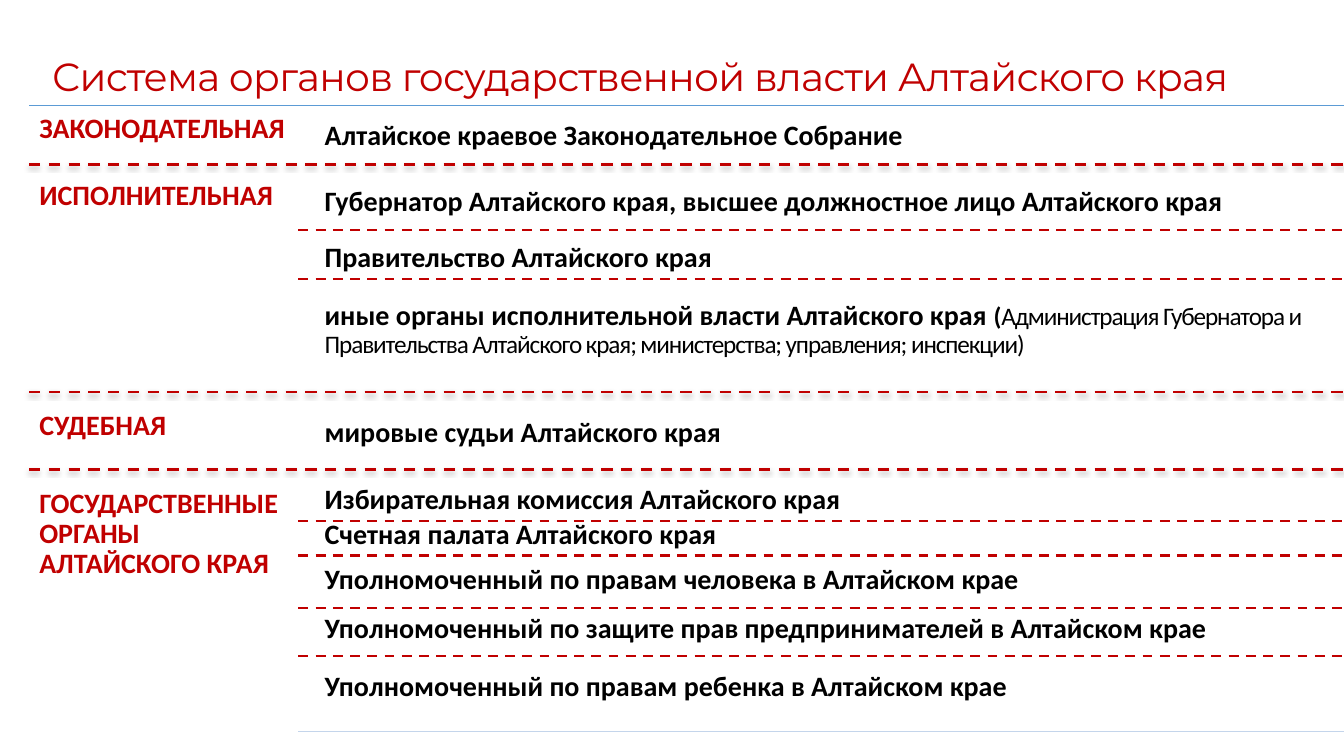
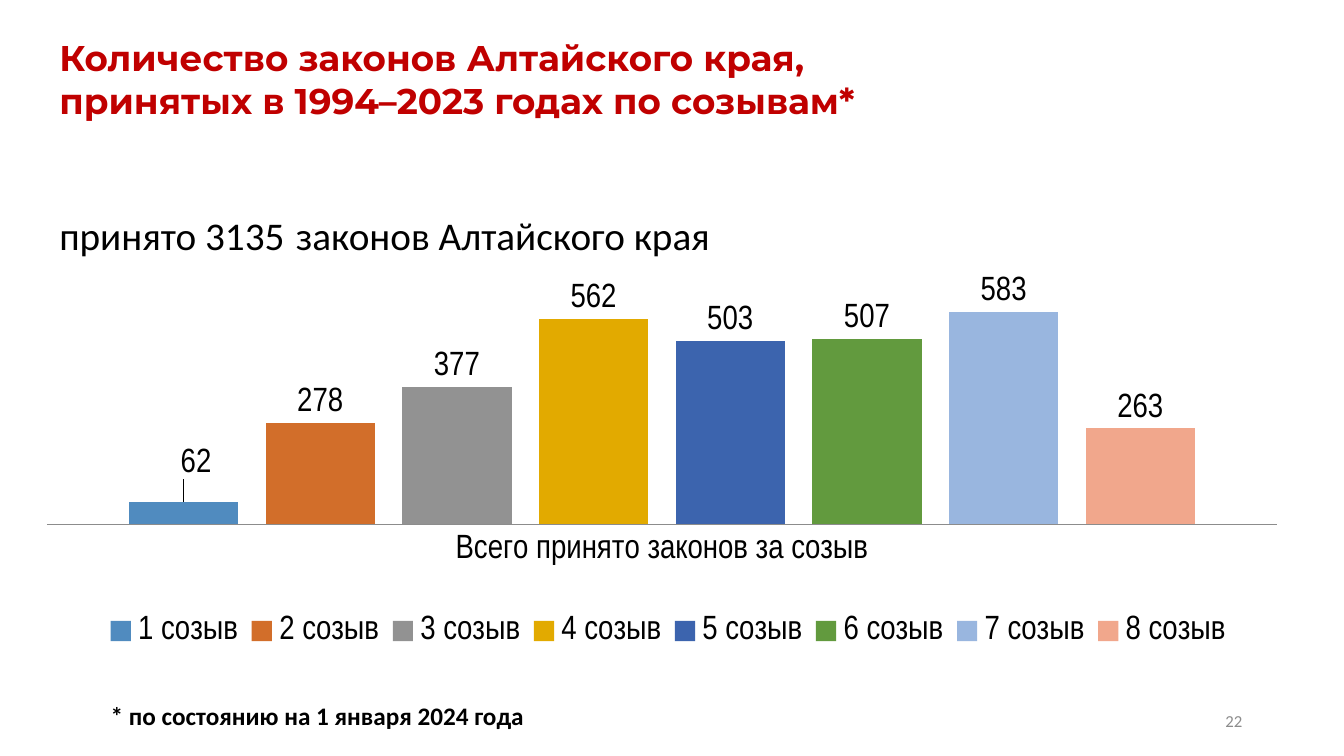
from dataclasses import dataclass

from lxml.etree import SubElement
from pptx import Presentation
from pptx.chart.data import CategoryChartData
from pptx.dml.color import RGBColor
from pptx.enum.chart import XL_CHART_TYPE, XL_LABEL_POSITION, XL_LEGEND_POSITION
from pptx.enum.chart import XL_TICK_LABEL_POSITION, XL_TICK_MARK
from pptx.enum.dml import MSO_LINE
from pptx.enum.shapes import MSO_CONNECTOR
from pptx.enum.text import MSO_ANCHOR, PP_ALIGN
from pptx.oxml import parse_xml
from pptx.oxml.ns import nsdecls, qn
from pptx.util import Inches, Pt


@dataclass(frozen=True)
class Theme:
    red: str = "C00000"
    black: str = "000000"
    gray: str = "8C8C8C"
    blue: str = "5B9BD5"
    pale_blue: str = "C4D5EB"
    title_font: str = "Montserrat"
    body_font: str = "Calibri"
    chart_font: str = "Arial Narrow"
    title_size: float = 28
    long_title_size: float = 25.5
    lead_size: float = 28
    lead_gap_size: float = 36
    chart_size: float = 24
    body_size: float = 20
    note_size: float = 18
    number_size: float = 12


THEME = Theme()
SLIDE_WIDTH, SLIDE_HEIGHT = 13.33, 7.5
TABLE_TOP = 1.05
SECTION_LEFT, ROW_LEFT = 0.29, 2.96
LABEL_LEFT, LABEL_WIDTH = 0.31, 2.67
TEXT_LEFT, TEXT_WIDTH = 3.14, 10.1
TEXT_HEIGHT, CELL_INSET = 0.49, 0.08

EXECUTIVE_DETAIL = ("Администрация Губернатора и Правительства Алтайского края; "
                    "министерства; управления; инспекции)")
# Each section: label, its drop below the section's top line, then rows of
# (text, lighter detail, band height, drop of the text below the band's top line).
SECTIONS = [
    ("ЗАКОНОДАТЕЛЬНАЯ", 0, [
        ("Алтайское краевое Законодательное Собрание", "", 0.58, 0.07)]),
    ("ИСПОЛНИТЕЛЬНАЯ", 0.09, [
        ("Губернатор Алтайского края, высшее должностное лицо Алтайского края", "", 0.65, 0.15),
        ("Правительство Алтайского края", "", 0.49, 0.05),
        ("иные органы исполнительной власти Алтайского края ", EXECUTIVE_DETAIL, 1.12, 0.14)]),
    ("СУДЕБНАЯ", 0.11, [
        ("мировые судьи Алтайского края", "", 0.77, 0.18)]),
    ("ГОСУДАРСТВЕННЫЕ ОРГАНЫ\vАЛТАЙСКОГО КРАЯ", 0.11, [
        ("Избирательная комиссия Алтайского края", "", 0.51, 0.07),
        ("Счетная палата Алтайского края", "", 0.34, -0.09),
        ("Уполномоченный по правам человека в Алтайском крае", "", 0.52, 0.02),
        ("Уполномоченный по защите прав предпринимателей в Алтайском крае", "", 0.48, -0.02),
        ("Уполномоченный по правам ребенка в Алтайском крае", "", 0.75, 0.08)]),
]

LAWS_CATEGORY = "Всего принято законов за созыв"
LAWS_BY_CONVOCATION = [
    (62, "508BBF"), (278, "D26E2A"), (377, "929292"), (562, "E2AA00"),
    (503, "3C64AE"), (507, "629A3E"), (583, "99B6DF"), (263, "F1A78C"),
]


def rgb(color):
    return RGBColor.from_string(color)


def style_font(font, size, color=THEME.black, bold=False, name=THEME.body_font):
    font.name, font.size, font.bold = name, Pt(size), bold
    font.color.rgb = rgb(color)


def set_tracking(run, points):
    run._r.get_or_add_rPr().set("spc", str(round(points * 100)))


def add_text(slide, box, text, size, color=THEME.black, bold=False, name=THEME.body_font,
             inset=None, line_spacing=None, anchor=MSO_ANCHOR.TOP):
    """Add a one-paragraph text box and return its paragraph."""
    frame = slide.shapes.add_textbox(*map(Inches, box)).text_frame
    frame.word_wrap = True
    frame.vertical_anchor = anchor
    if inset is not None:
        frame.margin_left = frame.margin_right = Inches(inset)
        frame.margin_top = frame.margin_bottom = Inches(inset)
    frame.text = text
    paragraph = frame.paragraphs[0]
    paragraph.line_spacing = line_spacing
    for run in paragraph.runs:
        style_font(run.font, size, color, bold, name)
    return paragraph


def add_run(paragraph, text, size, bold=False):
    run = paragraph.add_run()
    run.text = text
    style_font(run.font, size, bold=bold)
    return run


def add_title(slide, box, text, size, **options):
    return add_text(slide, box, text, size, THEME.red, name=THEME.title_font, **options)


def add_rule(slide, left, top, color, width, dashed=False, shadow=False):
    """Draw a horizontal line from left to the slide's right edge."""
    rule = slide.shapes.add_connector(MSO_CONNECTOR.STRAIGHT, Inches(left), Inches(top),
                                      Inches(SLIDE_WIDTH), Inches(top))
    rule.line.color.rgb = rgb(color)
    rule.line.width = Pt(width)
    if dashed:
        rule.line.dash_style = MSO_LINE.DASH
    effects = SubElement(rule._element.spPr, qn("a:effectLst"))
    if shadow:
        effects.append(parse_xml(
            f'<a:outerShdw {nsdecls("a")} blurRad="{Pt(3.1)}" dist="{Pt(1.8)}" dir="5400000">'
            f'<a:srgbClr val="{THEME.black}"><a:alpha val="35000"/></a:srgbClr></a:outerShdw>'))


def build_authorities_slide(slide):
    title = add_title(slide, (0.42, 0.16, 12.7, 1.25),
                      "Система органов государственной власти Алтайского края",
                      THEME.title_size, line_spacing=0.9, anchor=MSO_ANCHOR.MIDDLE)
    set_tracking(title.runs[0], -0.5)

    cell = dict(size=THEME.body_size, bold=True, inset=CELL_INSET, line_spacing=0.9)
    top = TABLE_TOP
    for section_index, (label, label_drop, rows) in enumerate(SECTIONS):
        if section_index == 0:
            add_rule(slide, SECTION_LEFT, top, THEME.blue, 0.5, shadow=True)
        else:
            add_rule(slide, SECTION_LEFT, top, THEME.red, 2, dashed=True, shadow=True)
        add_text(slide, (LABEL_LEFT, top + label_drop, LABEL_WIDTH, TEXT_HEIGHT), label,
                 color=THEME.red, **cell)
        for row_index, (text, detail, band_height, text_drop) in enumerate(rows):
            if row_index > 0:
                add_rule(slide, ROW_LEFT, top, THEME.red, 1.75, dashed=True)
            paragraph = add_text(slide, (TEXT_LEFT, top + text_drop, TEXT_WIDTH, TEXT_HEIGHT),
                                 text, **cell)
            if detail:
                for part, bold in (("(", True), (detail, False)):
                    set_tracking(add_run(paragraph, part, THEME.note_size, bold), -0.8)
            top += band_height
    add_rule(slide, ROW_LEFT, top, THEME.pale_blue, 1)


def set_layout(element, index, **settings):
    """Give a chart part a manual layout as its child at index."""
    for old_layout in element.findall(qn("c:layout")):
        element.remove(old_layout)
    layout = parse_xml(f'<c:layout {nsdecls("c")}><c:manualLayout/></c:layout>')
    for tag, value in settings.items():
        SubElement(layout[0], qn(f"c:{tag}")).set("val", str(value))
    element.insert(index, layout)


def hide_leader_lines(data_labels):
    data_labels.append(parse_xml(
        f'<c:extLst {nsdecls("c")}><c:ext uri="{{CE6537A1-D6FC-4f65-9D91-7224C49458BB}}" '
        'xmlns:c15="http://schemas.microsoft.com/office/drawing/2012/chart">'
        '<c15:showLeaderLines val="0"/></c:ext></c:extLst>'))


def add_laws_chart(slide):
    data = CategoryChartData()
    data.categories = [LAWS_CATEGORY]
    for number, (laws, _) in enumerate(LAWS_BY_CONVOCATION, start=1):
        data.add_series(f"{number} созыв", [laws])
    chart = slide.shapes.add_chart(
        XL_CHART_TYPE.COLUMN_CLUSTERED, Inches(0.34), Inches(1.49),
        Inches(12.45), Inches(5.89), data).chart
    style_font(chart.font, THEME.chart_size, name=THEME.chart_font)
    chart.has_title = False

    values = chart.value_axis
    values.visible = values.has_major_gridlines = False
    values.minimum_scale, values.maximum_scale = 0, 700
    categories = chart.category_axis
    categories.major_tick_mark = categories.minor_tick_mark = XL_TICK_MARK.NONE
    categories.tick_label_position = XL_TICK_LABEL_POSITION.LOW
    categories.format.line.color.rgb = rgb(THEME.gray)
    for label_offset in categories._element.findall(qn("c:lblOffset")):
        label_offset.set("val", "0")

    plot = chart.plots[0]
    plot.gap_width, plot.overlap, plot.vary_by_categories = 150, -25, False
    for series, (_, color) in zip(plot.series, LAWS_BY_CONVOCATION):
        series.format.fill.solid()
        series.format.fill.fore_color.rgb = rgb(color)
        labels = series.data_labels
        labels.show_value = True
        labels.position = XL_LABEL_POSITION.OUTSIDE_END
        style_font(labels.font, THEME.chart_size, name=THEME.chart_font)

    first_series = plot.series[0]
    first_label = first_series.points[0].data_label
    style_font(first_label.font, THEME.chart_size, name=THEME.chart_font)
    first_label.position = XL_LABEL_POSITION.OUTSIDE_END
    set_layout(first_series._element.find(f'.//{qn("c:dLbl")}'), 1, x=0.01, y=-0.03)
    hide_leader_lines(first_series._element.find(qn("c:dLbls")))

    chart.has_legend = True
    chart.legend.position = XL_LEGEND_POSITION.TOP
    chart.legend.include_in_layout = False
    style_font(chart.legend.font, THEME.chart_size, name=THEME.chart_font)
    set_layout(chart.legend._element, 1, xMode="edge", yMode="edge", x=0.05, y=0.76, w=0.91, h=0.1)
    plot_area = chart._chartSpace.find(f'.//{qn("c:plotArea")}')
    set_layout(plot_area, 0, layoutTarget="inner", xMode="edge", yMode="edge",
               x=0.01, y=0.2, w=0.98, h=0.43)


def build_laws_slide(slide):
    add_laws_chart(slide)
    lead = add_text(slide, (0.49, 1.94, 8.77, 0.71), "принято 3135", THEME.lead_size)
    add_run(lead, " ", THEME.lead_gap_size)
    add_run(lead, "законов Алтайского края", THEME.lead_size)
    add_title(slide, (0.49, 0.31, 11.73, 0.96),
              "Количество законов Алтайского края,\vпринятых в 1994–2023 годах по созывам*",
              THEME.long_title_size, bold=True)
    add_text(slide, (1, 6.9, 4.8, 0.4), "* по состоянию на 1 января 2024 года",
             THEME.note_size, bold=True)
    number = add_text(slide, (9.42, 6.95, 3, 0.4), "22", THEME.number_size, THEME.gray,
                      anchor=MSO_ANCHOR.MIDDLE)
    number.alignment = PP_ALIGN.RIGHT


def main():
    presentation = Presentation()
    presentation.slide_width = Inches(SLIDE_WIDTH)
    presentation.slide_height = Inches(SLIDE_HEIGHT)
    blank_layout = presentation.slide_layouts[6]
    for build in (build_authorities_slide, build_laws_slide):
        build(presentation.slides.add_slide(blank_layout))
    presentation.save("out.pptx")


if __name__ == "__main__":
    main()
